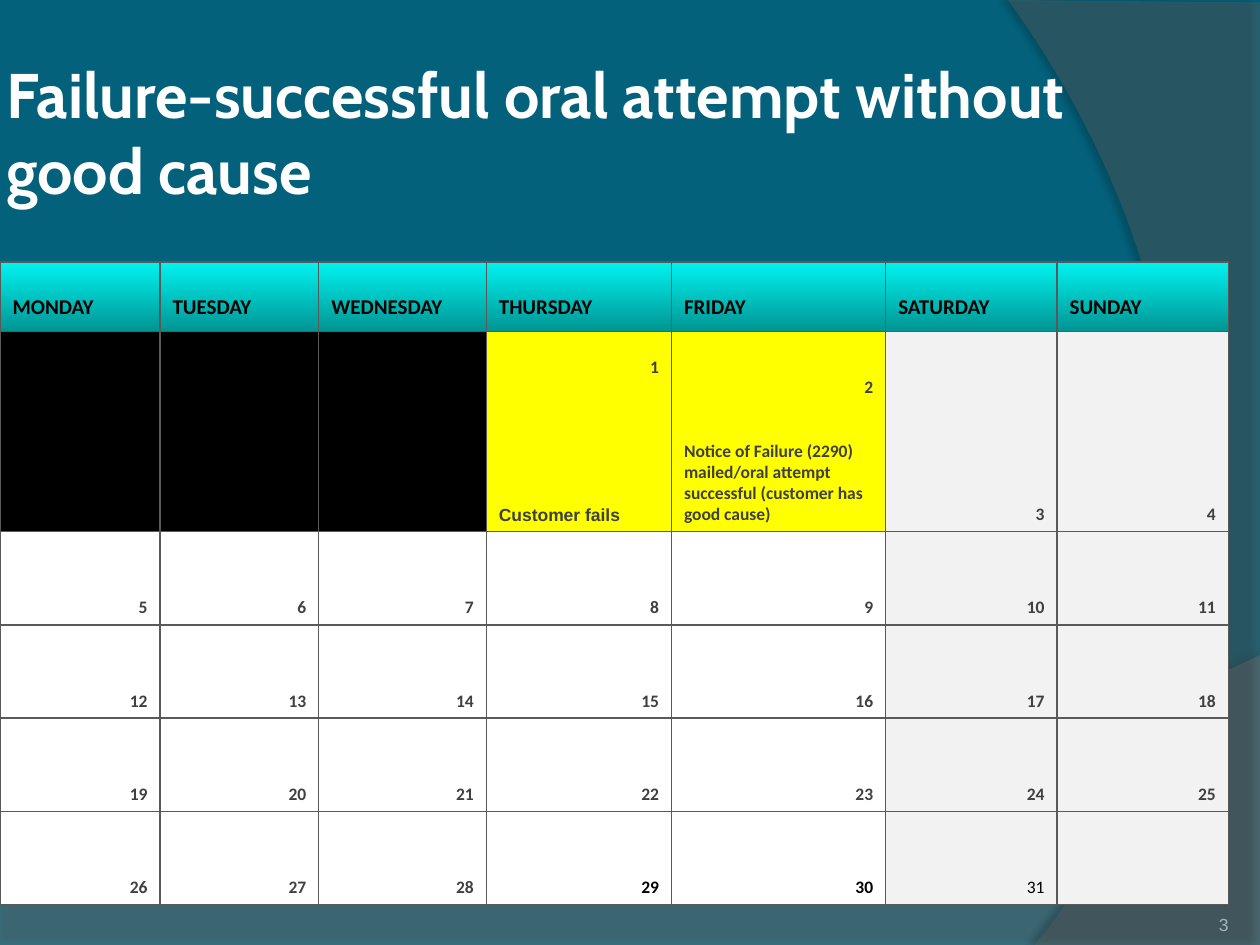
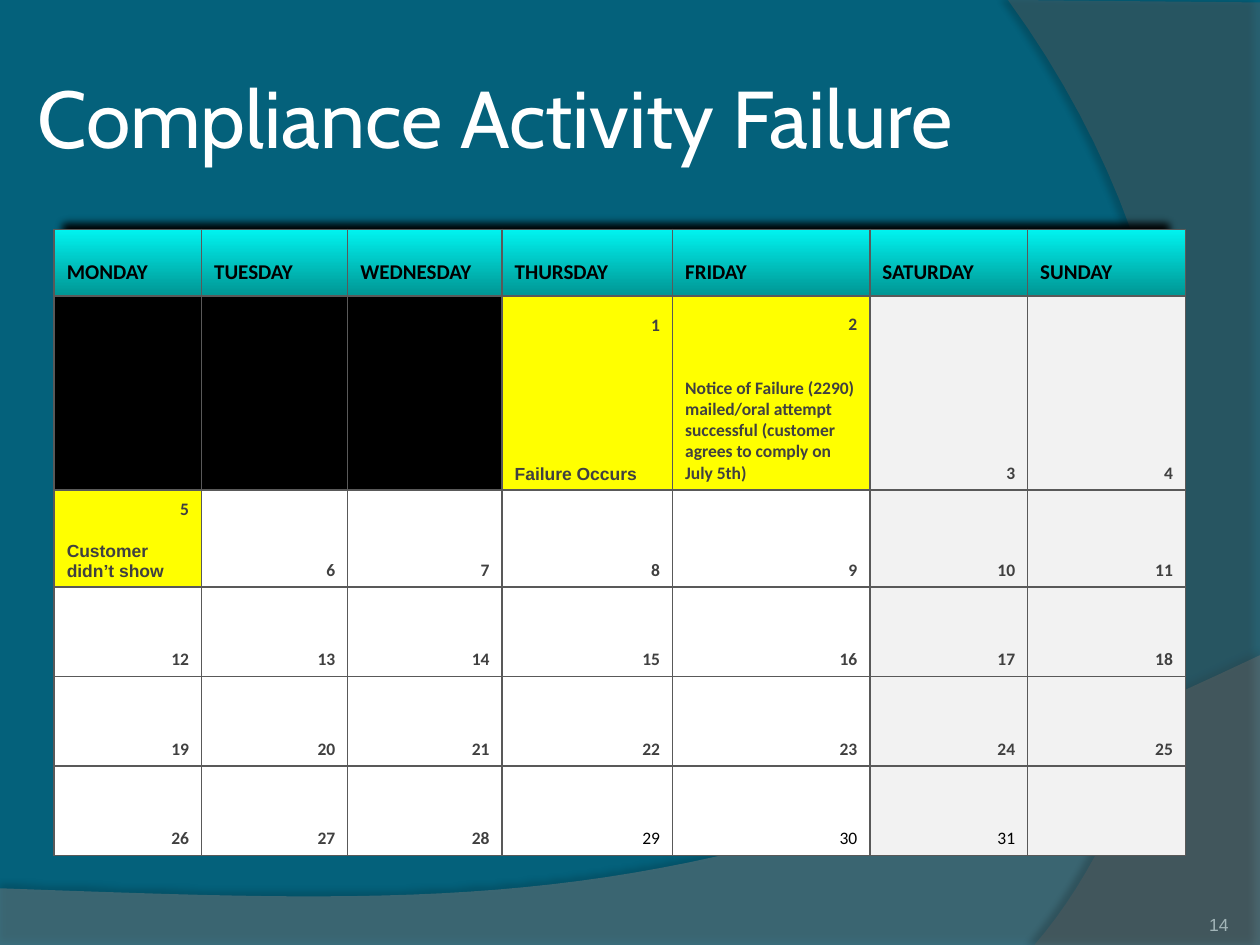
"""Build two compliance calendar slides with a shared wave backdrop."""
import dataclasses

import lxml.etree
import pptx
import pptx.dml.color
import pptx.enum.shapes
import pptx.enum.text
import pptx.oxml
import pptx.oxml.ns
import pptx.util

Inches = pptx.util.Inches
Pt = pptx.util.Pt
RGB = pptx.dml.color.RGBColor.from_string
ANCHOR = pptx.enum.text.MSO_ANCHOR
ALIGN = pptx.enum.text.PP_ALIGN
qn = pptx.oxml.ns.qn
NS = 'xmlns:a="http://schemas.openxmlformats.org/drawingml/2006/main"'


@dataclasses.dataclass(frozen=True)
class Theme:
    background: str = "04617B"
    white: str = "FFFFFF"
    black: str = "000000"
    ink: str = "404040"
    page: str = "A2B5B8"
    weekend: str = "F2F2F2"
    event: str = "FFFF00"
    head_top: str = "00F3F0"
    head_bottom: str = "009593"
    border: str = "595959"
    title_font: str = "Cabin"
    day_font: str = "Calibri"
    note_font: str = "Arial"
    head_size: int = 12
    text_size: int = 10


theme = Theme()


def bezier(a, b, c, d, steps=40):
    return [
        tuple(
            (1 - t) ** 3 * a[i] + 3 * t * (1 - t) ** 2 * b[i]
            + 3 * t ** 2 * (1 - t) * c[i] + t ** 3 * d[i]
            for i in (0, 1)
        )
        for t in (n / steps for n in range(1, steps + 1))
    ]


def add_run(p, text, size, font, color, bold=False):
    r = p.add_run()
    r.text = text
    r.font.size = Pt(size)
    r.font.name = font
    r.font.bold = bold
    r.font.color.rgb = RGB(color)


bottom_wave = [(0, 7.05), (0, 7.51), (10, 7.51), (10, 5.2)]
bottom_wave += bezier((10, 5.2), (5.59, 7.29), (3.91, 7.19), (0, 7.05))
side_wave = [(10, 0.02), (10, 7.5), (8.21, 7.5)]
side_wave += bezier((8.21, 7.5), (9.35, 6.19), (10.18, 3), (8, 0))
waves = [
    dict(points=bottom_wave, color="7F7F7F", alpha=45, shade=35, dist=3.5, angle=270),
    dict(points=side_wave, color="5E5E5E", alpha=40, shade=45, dist=4, angle=180),
]

weekdays = ["MONDAY", "TUESDAY", "WEDNESDAY", "THURSDAY", "FRIDAY", "SATURDAY", "SUNDAY"]
col_widths = [1.27, 1.26, 1.33, 1.47, 1.7, 1.36, 1.36]
last_day = 31

slides = [
    dict(
        title="Failure-successful oral attempt without good cause",
        title_box=(0, 0.33, 9.5, 1.42), title_size=36, title_bold=True,
        page="3", panel=None,
        table_at=(0, 2.08), table_width=9.75, rows=[0.55, 1.59] + [0.74] * 4,
        notes={
            1: ("Customer fails", theme.note_font, 73),
            2: ("Notice of Failure (2290) mailed/oral attempt successful "
                "(customer has good cause)", theme.day_font, 24.4),
        },
        black_days=(29, 30, 31), light_days=(31,),
    ),
    dict(
        title="Compliance Activity Failure",
        title_box=(0.25, 0.3, 9.25, 1.25), title_size=46, title_bold=False,
        page="14", panel=(0.41, 1.69, 8.97, 4.65),
        table_at=(0.43, 1.82), table_width=8.98, rows=[0.53, 1.54, 0.75] + [0.71] * 3,
        notes={
            1: ("Failure Occurs", theme.note_font, 73),
            2: ("Notice of Failure (2290) mailed/oral attempt successful "
                "(customer agrees to comply on July 5th)", theme.day_font, 24.4),
            5: ("Customer didn’t show", theme.note_font, 12.2),
        },
        black_days=(29, 30, 31), light_days=(29, 30, 31),
    ),
]

prs = pptx.Presentation()
prs.slide_width = Inches(10)
prs.slide_height = Inches(7.5)

for page in slides:
    s = prs.slides.add_slide(prs.slide_layouts[6])
    s.background.fill.solid()
    s.background.fill.fore_color.rgb = RGB(theme.background)

    for wave in waves:
        points = [(Inches(x), Inches(y)) for x, y in wave["points"]]
        builder = s.shapes.build_freeform(*points[0])
        builder.add_line_segments(points[1:], close=True)
        sp = builder.convert_to_shape()
        sp.shadow.inherit = False
        sp.line.fill.background()
        sp.fill.solid()
        sp.fill.fore_color.rgb = RGB(wave["color"])
        color = sp.fill._xPr.find(qn("a:solidFill"))[0]
        lxml.etree.SubElement(color, qn("a:alpha"), val=str(wave["alpha"] * 1000))
        sp._element.spPr.find(qn("a:effectLst")).append(pptx.oxml.parse_xml(
            f'<a:outerShdw {NS} blurRad="{Pt(4)}" dist="{Pt(wave["dist"])}" '
            f'dir="{wave["angle"] * 60000}" algn="ctr" rotWithShape="0">'
            f'<a:srgbClr val="{theme.black}"><a:alpha val="{wave["shade"] * 1000}"/>'
            f'</a:srgbClr></a:outerShdw>'
        ))

    if page["panel"]:
        sp = s.shapes.add_shape(
            pptx.enum.shapes.MSO_SHAPE.RECTANGLE, *map(Inches, page["panel"]))
        sp.shadow.inherit = False
        sp.fill.solid()
        sp.fill.fore_color.rgb = RGB(theme.black)
        sp.line.fill.background()
        effects = sp._element.spPr.find(qn("a:effectLst"))
        lxml.etree.SubElement(effects, qn("a:softEdge"), rad=str(Pt(5)))

    scale = page["table_width"] / sum(col_widths)
    frame = s.shapes.add_table(
        len(page["rows"]), len(weekdays), *map(Inches, page["table_at"]),
        Inches(page["table_width"]), Inches(sum(page["rows"])))
    table = frame.table
    table.first_row = False
    table.horz_banding = False
    for column, width in zip(table.columns, col_widths):
        column.width = Inches(width * scale)
    for row, height in zip(table.rows, page["rows"]):
        row.height = Inches(height)

    for row in range(len(page["rows"])):
        for col, weekday in enumerate(weekdays):
            cell = table.cell(row, col)
            cell.vertical_anchor = ANCHOR.BOTTOM
            for side in ("lnL", "lnR", "lnT", "lnB"):
                cell._tc.get_or_add_tcPr().append(pptx.oxml.parse_xml(
                    f'<a:{side} {NS} w="{Pt(1)}"><a:solidFill>'
                    f'<a:srgbClr val="{theme.border}"/></a:solidFill></a:{side}>'
                ))
            p = cell.text_frame.paragraphs[0]

            if row == 0:
                cell.margin_bottom = Inches(0.09)
                cell.fill.gradient()
                cell.fill.gradient_angle = 270
                for stop, shade in zip(cell.fill.gradient_stops,
                                       (theme.head_top, theme.head_bottom)):
                    stop.color.rgb = RGB(shade)
                add_run(p, weekday, theme.head_size, theme.day_font, theme.black, True)
                continue

            day = (row - 1) * 7 + col - 2
            if day < 1:
                fill = theme.black
            elif day in page["notes"]:
                fill = theme.event
            else:
                fill = theme.weekend if col > 4 else theme.white
            cell.fill.solid()
            cell.fill.fore_color.rgb = RGB(fill)
            if not 1 <= day <= last_day:
                continue

            p.alignment = ALIGN.RIGHT
            ink = theme.black if day in page["black_days"] else theme.ink
            add_run(p, str(day), theme.text_size, theme.day_font, ink,
                    day not in page["light_days"])
            if day in page["notes"]:
                note, font, gap = page["notes"][day]
                p = cell.text_frame.add_paragraph()
                p.space_before = Pt(gap)
                add_run(p, note, theme.text_size, font, theme.ink, True)

    labels = [
        (page["title_box"], 0.05, ANCHOR.MIDDLE, ALIGN.LEFT, page["title"],
         page["title_size"], theme.title_font, theme.white, page["title_bold"]),
        ((8.92, 7.02, 0.83, 0.4), 0, ANCHOR.BOTTOM, ALIGN.RIGHT, page["page"],
         theme.text_size, theme.note_font, theme.page, False),
    ]
    for box, inset, anchor, align, *run in labels:
        tf = s.shapes.add_textbox(*map(Inches, box)).text_frame
        tf.word_wrap = True
        tf.vertical_anchor = anchor
        tf.margin_left = tf.margin_right = Inches(inset)
        tf.margin_top = tf.margin_bottom = Inches(inset)
        p = tf.paragraphs[0]
        p.alignment = align
        add_run(p, *run)

prs.save("out.pptx")
